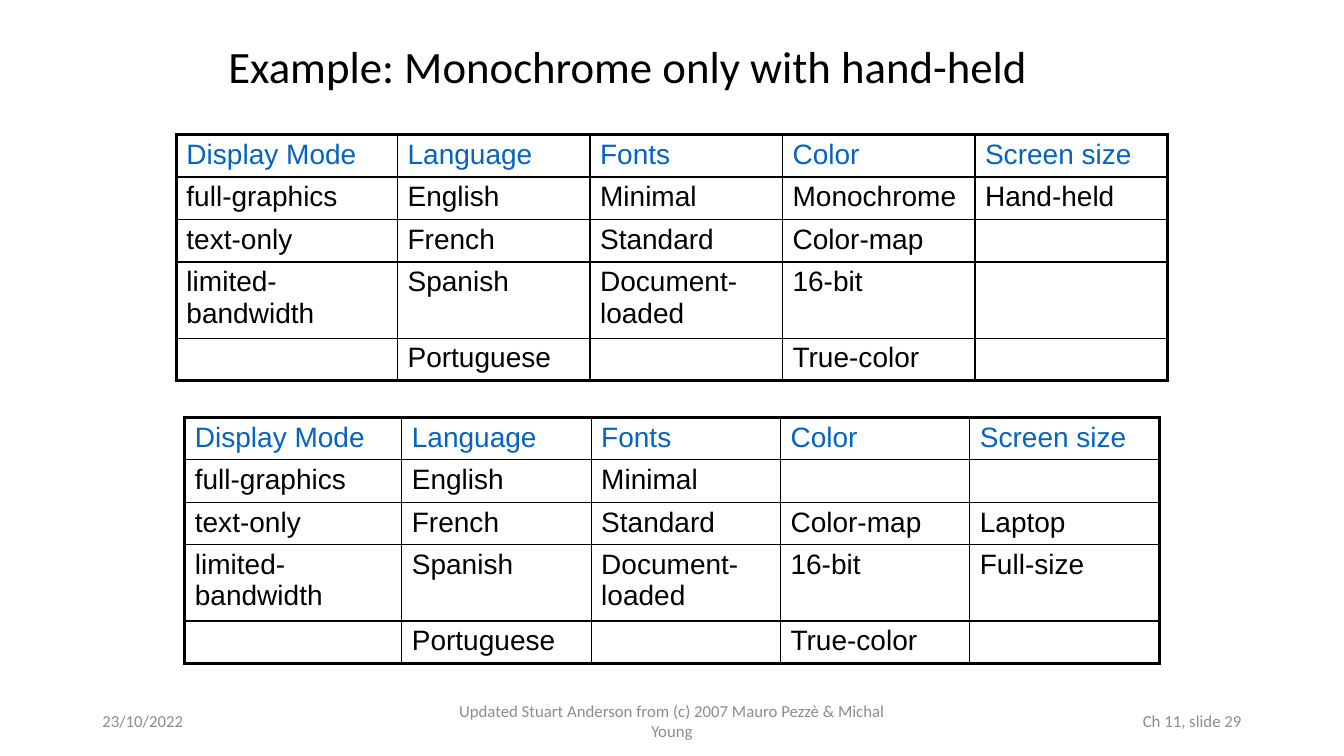
"""Build a slide with two category tables for a monochrome hand-held constraint."""
import lxml.etree
import pptx
import pptx.dml.color
import pptx.enum.text
import pptx.oxml.ns
import pptx.util

Pt = pptx.util.Pt
qn = pptx.oxml.ns.qn
Align = pptx.enum.text.PP_ALIGN
BLACK, BLUE, GREY = "000000", "0563C1", "8C8C8C"


def add_run(para, text, font, size, color):
    span = para.add_run()
    span.text = text
    span.font.name = font
    span.font.size = Pt(size)
    span.font.color.rgb = pptx.dml.color.RGBColor.from_string(color)


def add_border(cell, side, width):
    line = lxml.etree.SubElement(cell._tc.get_or_add_tcPr(), qn(f"a:ln{side}"), w=str(Pt(width)))
    fill = lxml.etree.SubElement(line, qn("a:solidFill"))
    lxml.etree.SubElement(fill, qn("a:srgbClr"), val=BLACK)


deck = pptx.Presentation()
deck.slide_width, deck.slide_height = Pt(960), Pt(540)
page = deck.slides.add_slide(deck.slide_layouts[6])

texts = [
    ("Example: Monochrome only with hand-held", 156, 6, 648, 86.4, 32, BLACK, Align.LEFT),
    ("23/10/2022", 66, 500.5, 216, 28.75, 12, GREY, Align.LEFT),
    ("Updated Stuart Anderson from (c) 2007 Mauro Pezzè & Michal Young",
     318, 500.5, 324, 28.75, 12, GREY, Align.CENTER),
    ("Ch 11, slide 29", 678, 500.5, 216, 28.75, 12, GREY, Align.RIGHT),
]
for text, left, top, width, height, size, color, align in texts:
    box = page.shapes.add_textbox(Pt(left), Pt(top), Pt(width), Pt(height))
    box.text_frame.word_wrap = True
    box.text_frame.vertical_anchor = pptx.enum.text.MSO_ANCHOR.MIDDLE
    para = box.text_frame.paragraphs[0]
    para.alignment = align
    para.line_spacing = 0.9 if size == 32 else 1.0
    add_run(para, text, "Calibri", size, color)

headings = ["Display Mode", "Language", "Fonts", "Color", "Screen size"]
shared_columns = [
    ["full-graphics", "English", "Minimal"],
    ["text-only", "French", "Standard"],
    ["limited-bandwidth", "Spanish", "Document-loaded"],
    ["", "Portuguese", ""],
]
row_heights = [29.5, 29.5, 29.5, 52, 29.5]
tables = [
    (126, 96, 158, 137.5,
     [["Monochrome", "Hand-held"], ["Color-map", ""], ["16-bit", ""], ["True-color", ""]]),
    (132, 298, 155, 135.25,
     [["", ""], ["Color-map", "Laptop"], ["16-bit", "Full-size"], ["True-color", ""]]),
]
for left, top, first_width, other_width, own_columns in tables:
    rows = [headings] + [shared + own for shared, own in zip(shared_columns, own_columns)]
    widths = [first_width] + [other_width] * 4
    table = page.shapes.add_table(
        5, 5, Pt(left), Pt(top), Pt(sum(widths)), Pt(sum(row_heights))).table
    table.first_row = table.horz_banding = False
    for column, width in zip(table.columns, widths):
        column.width = Pt(width)
    for row, height in zip(table.rows, row_heights):
        row.height = Pt(height)
    for r, words in enumerate(rows):
        for c, word in enumerate(words):
            cell = table.cell(r, c)
            cell.margin_top = cell.margin_bottom = Pt(3.2)
            para = cell.text_frame.paragraphs[0]
            para.font.size = Pt(20)
            if word:
                add_run(para, word, "Arial", 20, BLACK if r else BLUE)
            outer = {"L": c == 0, "R": c == 4, "T": r == 0, "B": r == 4}
            for side, is_outer in outer.items():
                add_border(cell, side, 2.25 if is_outer else 1)
            cell.fill.background()

deck.save("out.pptx")
